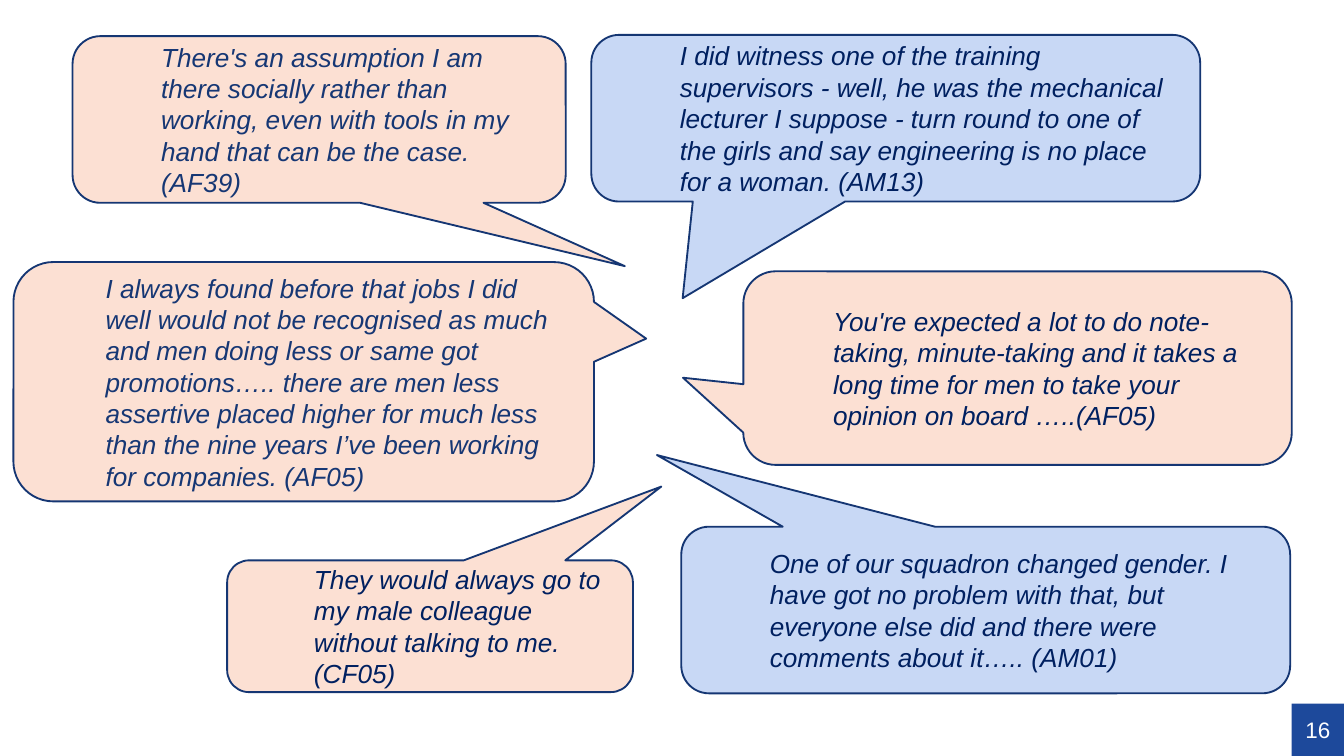
from pptx import Presentation
from pptx.dml.color import RGBColor
from pptx.enum.shapes import MSO_SHAPE
from pptx.enum.text import MSO_ANCHOR, PP_ALIGN
from pptx.util import Pt

COLORS = {
    "peach": "FCE0D3",
    "sky": "C8D8F5",
    "outline": "153673",
    "navy": "002060",
    "blue": "163774",
    "badge": "1D499B",
    "white": "FFFFFF",
}

QUOTE_FONT = {"name": "Arial", "size": Pt(14), "italic": True}
NUMBER_FONT = {"name": "Arial", "size": Pt(12), "italic": False}
NO_MARGINS = {
    "margin_left": 0,
    "margin_top": 0,
    "margin_right": 0,
    "margin_bottom": 0,
}

QUOTES = [
    ((398.2, 145.4, 293.8, 103.7), (-0.61, 0.05), "peach", "navy",
     "You're expected a lot to do note-taking, minute-taking and it takes a "
     "long time for men to take your opinion on board …..(AF05)"),
    ((7.2, 140.4, 311, 128.2), (0.59, -0.18), "peach", "blue",
     "I always found before that jobs I did well would not be recognised as "
     "much and men doing less or same got promotions….. there are men less "
     "assertive placed higher for much less than the nine years I’ve been "
     "working for companies. (AF05)"),
    ((121.7, 300.2, 217.4, 70.6), (0.57, -1.06), "peach", "navy",
     "They would always go to my male colleague without talking to me. (CF05)"),
    ((38.9, 19.4, 264.2, 89.3), (0.62, 0.88), "peach", "blue",
     "There's an assumption I am there socially rather than working, even "
     "with tools in my hand that can be the case. (AF39)"),
    ((316.8, 18.7, 326.2, 89.3), (-0.35, 1.08), "sky", "navy",
     "I did witness one of the training supervisors - well, he was the "
     "mechanical lecturer I suppose - turn round to one of the girls and say "
     "engineering is no place for a woman. (AM13)"),
    ((365, 282.2, 326.2, 89.3), (-0.54, -0.93), "sky", "navy",
     "One of our squadron changed gender. I have got no problem with that, "
     "but everyone else did and there were comments about it….. (AM01)"),
]


def set_all(obj, values):
    for name, value in values.items():
        setattr(obj, name, value)


class QuoteSlide:
    def __init__(self, slide, colors):
        self.slide = slide
        self.colors = {k: RGBColor.from_string(v) for k, v in colors.items()}

    def shape(self, kind, box, fill):
        sp = self.slide.shapes.add_shape(kind, *map(Pt, box))
        sp.shadow.inherit = False
        sp.fill.solid()
        sp.fill.fore_color.rgb = self.colors[fill]
        return sp

    def label(self, sp, text, font, color, align):
        tf = sp.text_frame
        set_all(tf, {"word_wrap": True, "vertical_anchor": MSO_ANCHOR.MIDDLE})
        p = tf.paragraphs[0]
        p.alignment = align
        r = p.add_run()
        r.text = text
        set_all(r.font, font)
        r.font.color.rgb = self.colors[color]
        return p

    def callout(self, box, tip, fill, color, text):
        sp = self.shape(MSO_SHAPE.ROUNDED_RECTANGULAR_CALLOUT, box, fill)
        sp.adjustments[0], sp.adjustments[1] = tip
        sp.line.color.rgb = self.colors["outline"]
        sp.line.width = Pt(1)
        p = self.label(sp, text, QUOTE_FONT, color, PP_ALIGN.LEFT)
        p.level = 1
        pPr = p._p.get_or_add_pPr()
        pPr.set("marL", str(Pt(36)))
        pPr.set("indent", "0")

    def number(self, box, text):
        sp = self.shape(MSO_SHAPE.RECTANGLE, box, "badge")
        sp.line.fill.background()
        set_all(sp.text_frame, NO_MARGINS)
        self.label(sp, text, NUMBER_FONT, "white", PP_ALIGN.CENTER)


def main():
    prs = Presentation()
    prs.slide_width, prs.slide_height = Pt(720), Pt(405)
    s = QuoteSlide(prs.slides.add_slide(prs.slide_layouts[6]), COLORS)
    s.number((692, 377, 28, 28), "16")
    for quote in QUOTES:
        s.callout(*quote)
    prs.save("out.pptx")


if __name__ == "__main__":
    main()
